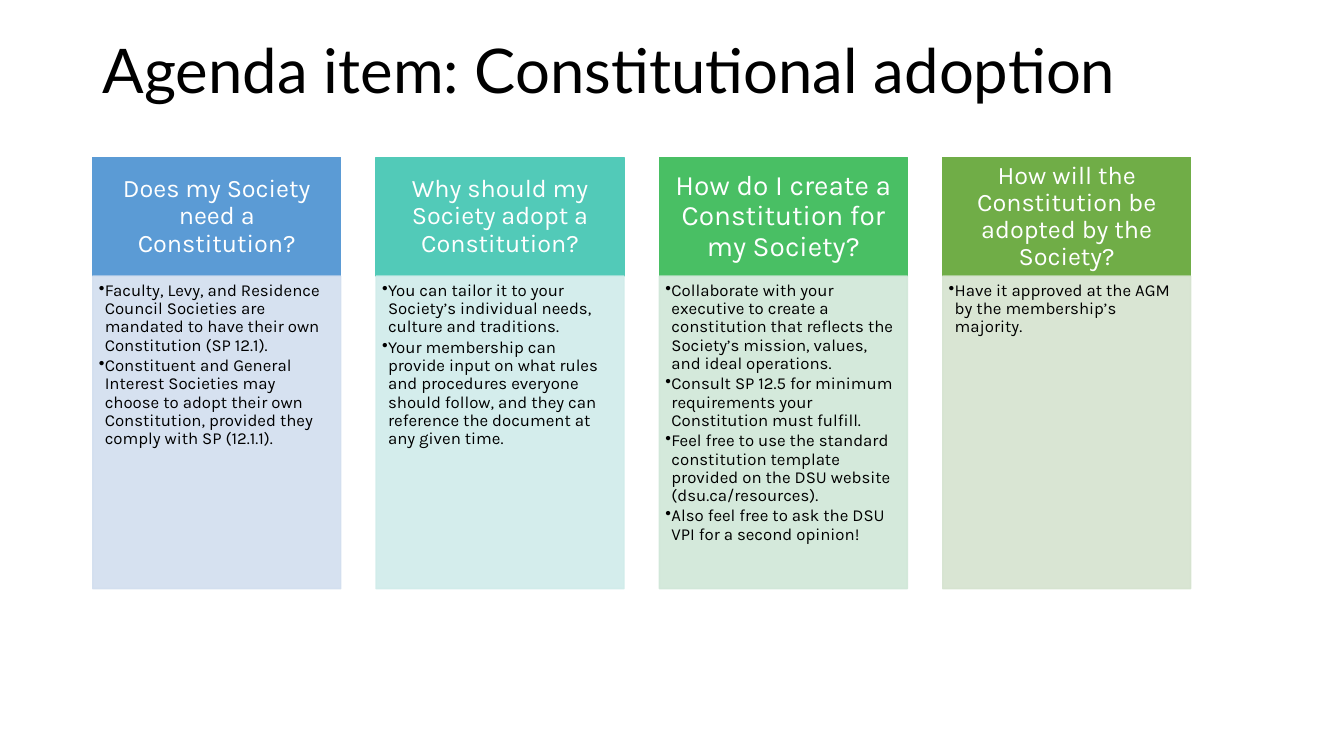
from lxml.etree import SubElement
from pptx import Presentation
from pptx.dml.color import RGBColor
from pptx.enum.shapes import MSO_SHAPE
from pptx.enum.text import MSO_ANCHOR as Anchor, PP_ALIGN as Align
from pptx.oxml.ns import qn
from pptx.util import Inches, Pt

COLORS = {
    "text": "000000", "header_text": "FFFFFF",
    "blue": "5B9BD5", "pale_blue": "D2DEEF",
    "teal": "52CAB8", "pale_teal": "D0ECEA",
    "green": "49BF64", "pale_green": "D0E7D8",
    "olive": "70AD47", "pale_olive": "D5E3CF",
}

QUESTIONS = [
    ("blue", "Does my Society need a Constitution?", 18, (0.14, 0.08), [
        "Faculty, Levy, and Residence Council Societies are mandated to have their own Constitution (SP 12.1).",
        "Constituent and General Interest Societies may choose to adopt their own Constitution, "
        "provided they comply with SP (12.1.1).",
    ]),
    ("teal", "Why should my Society adopt a Constitution?", 18, (0.14, 0.08), [
        "You can tailor it to your Society’s individual needs, culture and traditions.",
        "Your membership can provide input on what rules and procedures everyone should follow, "
        "and they can reference the document at any given time.",
    ]),
    ("green", "How do I create a Constitution for my Society?", 20, (0.16, 0.09), [
        "Collaborate with your executive to create a constitution that reflects the Society’s mission, "
        "values, and ideal operations.",
        "Consult SP 12.5 for minimum requirements your Constitution must fulfill.",
        "Feel free to use the standard constitution template provided on the DSU website (dsu.ca/resources).",
        "Also feel free to ask the DSU VPI for a second opinion!",
    ]),
    ("olive", "How will the Constitution be adopted by the Society?", 18, (0.12, 0.07), [
        "Have it approved at the AGM by the membership’s majority.",
    ]),
]


def write(frame, lines, *, size, font="Karla", color="text", align=Align.LEFT,
          anchor=Anchor.TOP, insets=(0.1, 0.05, 0.1, 0.05), after=0, bullet=False):
    """Fill a text frame with one paragraph per line."""
    frame.word_wrap = True
    frame.vertical_anchor = anchor
    (frame.margin_left, frame.margin_top,
     frame.margin_right, frame.margin_bottom) = map(Inches, insets)
    for index, line in enumerate(lines):
        paragraph = frame.add_paragraph() if index else frame.paragraphs[0]
        if bullet:
            paragraph.level = 1
            properties = paragraph._p.get_or_add_pPr()
            properties.set("marL", str(Inches(0.06)))
            properties.set("indent", str(-Inches(0.06)))
            SubElement(properties, qn("a:buChar"), char="•")
        paragraph.alignment = align
        paragraph.line_spacing = 0.9
        paragraph.space_after = Pt(after)
        run = paragraph.add_run()
        run.text = line
        run.font.name = font
        run.font.size = Pt(size)
        run.font.color.rgb = RGBColor.from_string(COLORS[color])


def add_panel(slide, left, top, width, height, color, alpha=100):
    """Draw a filled and outlined rectangle and return its text frame."""
    panel = slide.shapes.add_shape(MSO_SHAPE.RECTANGLE, *map(Inches, (left, top, width, height)))
    panel.shadow.inherit = False
    panel.line.width = Pt(1)
    for fill in (panel.fill, panel.line.fill):
        fill.solid()
        fill.fore_color.rgb = RGBColor.from_string(COLORS[color])
    if alpha < 100:
        for tone in panel._element.spPr.iter(qn("a:srgbClr")):
            SubElement(tone, qn("a:alpha"), val=str(alpha * 1000))
    return panel.text_frame


def add_title(slide, left, top, width, height):
    """Place the slide title."""
    title = slide.shapes.add_textbox(*map(Inches, (left, top, width, height)))
    write(title.text_frame, ["Agenda item: Constitutional adoption"],
          size=44, font="Lato", anchor=Anchor.MIDDLE)


def add_question(slide, left, top, width, height, question):
    """Place one question header with its answers below."""
    color, heading, size, insets, answers = question
    header_height = 1.18
    header = add_panel(slide, left, top, width, header_height, color)
    write(header, [heading], size=size, color="header_text", align=Align.CENTER,
          anchor=Anchor.MIDDLE, insets=insets * 2, after=size * 0.35)
    body = add_panel(slide, left, top + header_height, width, height - header_height,
                     f"pale_{color}", alpha=90)
    write(body, answers, size=12, insets=(0.06, 0.06, 0.09, 0.1), after=1.8, bullet=True)


def add_questions(slide, left, top, width, height, gap=0.35):
    """Spread the questions over equal columns."""
    column = (width - gap * (len(QUESTIONS) - 1)) / len(QUESTIONS)
    for index, question in enumerate(QUESTIONS):
        add_question(slide, left + index * (column + gap), top, column, height, question)


def main():
    """Build and save the slide."""
    deck = Presentation()
    deck.slide_width, deck.slide_height = Inches(13.33), Inches(7.5)
    slide = deck.slides.add_slide(deck.slide_layouts[6])
    add_title(slide, 0.92, 0, 10.9, 1.45)
    add_questions(slide, 0.92, 1.56, 10.89, 4.28)
    deck.save("out.pptx")


if __name__ == "__main__":
    main()
